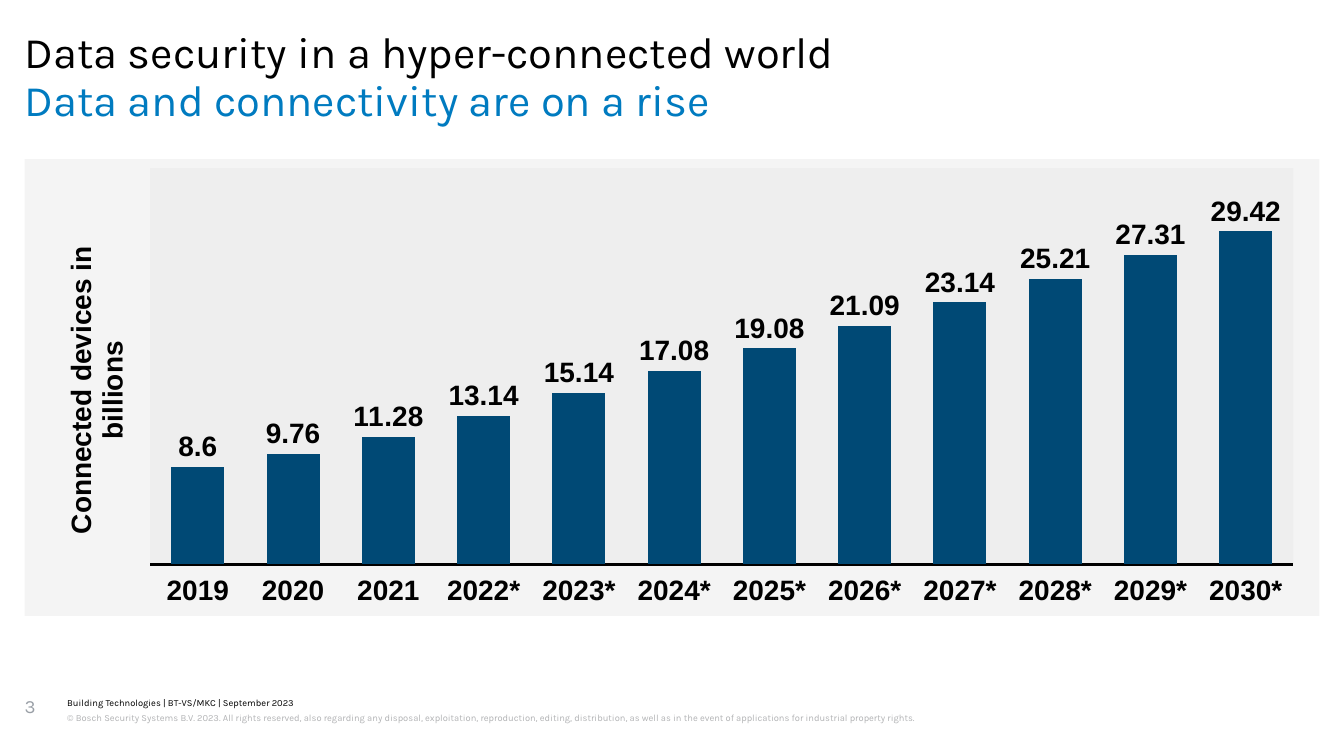
"""Build a slide with a column chart of connected devices per year."""
from pptx import Presentation
from pptx.chart.data import CategoryChartData
from pptx.dml.color import RGBColor
from pptx.enum.chart import (XL_CHART_TYPE as ChartType, XL_LABEL_POSITION as LabelPosition,
                             XL_TICK_LABEL_POSITION as TickLabels, XL_TICK_MARK as TickMark)
from pptx.oxml import parse_xml
from pptx.oxml.ns import nsdecls
from pptx.util import Inches, Pt

COLORS = {"black": "000000", "blue": "007BC0", "navy": "004975",
          "panel": "EAEAEA", "legal": "B2B3B5", "number": "999FA6"}
DEVICES = [8.6, 9.76, 11.28, 13.14, 15.14, 17.08, 19.08, 21.09, 23.14, 25.21, 27.31, 29.42]
YEARS = [f"{year}*" if year > 2021 else str(year) for year in range(2019, 2031)]
TEXTS = [
    ("Building Technologies | BT-VS/MKC | September 2023",
     (0.6, 6.22, 9.98, 0.12), 6, "black", {"line_spacing": 1.07, "space_after": Pt(1)}),
    ("© Bosch Security Systems B.V. 2023. All rights reserved, also regarding any disposal, "
     "exploitation, reproduction, editing, distribution, as well as in the event of "
     "applications for industrial property rights.",
     (0.6, 6.34, 9.98, 0.24), 6, "legal", {"line_spacing": 1.2, "space_after": Pt(1)}),
    ("Data security in a hyper-connected world",
     (0.22, 0.28, 11.55, 0.43), 28, "black", {"line_spacing": 0.89}),
    ("Data and connectivity are on a rise",
     (0.22, 0.71, 11.55, 0.43), 28, "blue", {"line_spacing": 0.89}),
    ("3", (0.22, 6.2, 0.32, 0.45), 12, "number", {}),
]


def rgb(name):
    """Return the named colour."""
    return RGBColor.from_string(COLORS[name])


def set_values(target, values):
    """Set each attribute in a dict on the target."""
    for name, value in values.items():
        setattr(target, name, value)


def style_font(font, size, color, face="Karla", bold=False):
    """Give a font its size, colour, face and weight."""
    set_values(font, {"size": Pt(size), "name": face, "bold": bold})
    font.color.rgb = rgb(color)


def add_text(slide, wording, box, size, color, spacing):
    """Add one line of text in a box without margins."""
    frame = slide.shapes.add_textbox(*map(Inches, box)).text_frame
    set_values(frame, {"word_wrap": True, "margin_left": 0, "margin_right": 0,
                       "margin_top": 0, "margin_bottom": 0})
    line = frame.paragraphs[0]
    set_values(line, spacing)
    run = line.add_run()
    run.text = wording
    style_font(run.font, size, color)


def panel_fill():
    """Return chart shape properties with a half-transparent fill."""
    return parse_xml(
        f'<c:spPr {nsdecls("c", "a")}><a:solidFill><a:srgbClr val="{COLORS["panel"]}">'
        '<a:alpha val="50000"/></a:srgbClr></a:solidFill><a:ln><a:noFill/></a:ln></c:spPr>')


def manual_layout(target="", **places):
    """Return a chart layout placed by fractions of the chart area."""
    inner = f'<c:layoutTarget val="{target}"/>' if target else ""
    modes = "".join(f'<c:{side}Mode val="edge"/>' for side in "xy")
    sizes = "".join(f'<c:{name} val="{value}"/>' for name, value in places.items())
    return parse_xml(f'<c:layout {nsdecls("c")}><c:manualLayout>{inner}{modes}{sizes}'
                     '</c:manualLayout></c:layout>')


def place_parts(chart):
    """Fill the panels and place the plot and the turned axis title."""
    space = chart.element
    plot_area = space.xpath("c:chart/c:plotArea")[0]
    title = plot_area.xpath("c:valAx/c:title")[0]
    for layout in plot_area.xpath("c:layout") + title.xpath("c:layout"):
        layout.getparent().remove(layout)
    plot_area.insert(0, manual_layout("inner", x=0.097, y=0.02, w=0.883, h=0.867))
    title.xpath("c:tx")[0].addnext(manual_layout(x=0.025, y=0.18))
    turned = title.xpath("c:tx/c:rich/a:bodyPr")[0]
    turned.set("rot", "-5400000")
    turned.set("vert", "horz")
    plot_area.append(panel_fill())
    space.xpath("c:chart")[0].addnext(panel_fill())


def style_axes(chart):
    """Show the years on a black line and hide the value scale."""
    years, devices = chart.category_axis, chart.value_axis
    set_values(years, {"major_tick_mark": TickMark.NONE, "minor_tick_mark": TickMark.NONE,
                       "tick_label_position": TickLabels.LOW, "has_major_gridlines": False})
    style_font(years.tick_labels.font, 18, "black", "Arial", True)
    years.format.line.color.rgb = rgb("black")
    years.format.line.width = Pt(2)
    set_values(devices, {"visible": False, "has_major_gridlines": False,
                         "minimum_scale": 0, "maximum_scale": 35})
    caption = devices.axis_title.text_frame.paragraphs[0].add_run()
    caption.text = "Connected devices in billions"
    style_font(caption.font, 18, "black", "Arial", True)


def add_devices_chart(slide):
    """Add the column chart of connected devices."""
    table = CategoryChartData()
    table.categories = YEARS
    table.add_series("Series 1", DEVICES)
    box = map(Inches, (0.22, 1.42, 11.56, 4.08))
    chart = slide.shapes.add_chart(ChartType.COLUMN_CLUSTERED, *box, table).chart
    set_values(chart, {"has_legend": False, "has_title": False})
    style_font(chart.font, 18, "black")
    style_axes(chart)
    columns = chart.plots[0]
    set_values(columns, {"gap_width": 80, "overlap": -30, "vary_by_categories": False})
    series = columns.series[0]
    series.format.fill.solid()
    series.format.fill.fore_color.rgb = rgb("navy")
    labels = series.data_labels
    set_values(labels, {"show_value": True, "position": LabelPosition.OUTSIDE_END})
    style_font(labels.font, 18, "black", "Arial", True)
    place_parts(chart)


def main():
    """Build and save the slide."""
    deck = Presentation()
    set_values(deck, {"slide_width": Inches(12), "slide_height": Inches(6.75)})
    slide = deck.slides.add_slide(deck.slide_layouts[6])
    for text in TEXTS:
        add_text(slide, *text)
    add_devices_chart(slide)
    deck.save("out.pptx")


if __name__ == "__main__":
    main()
